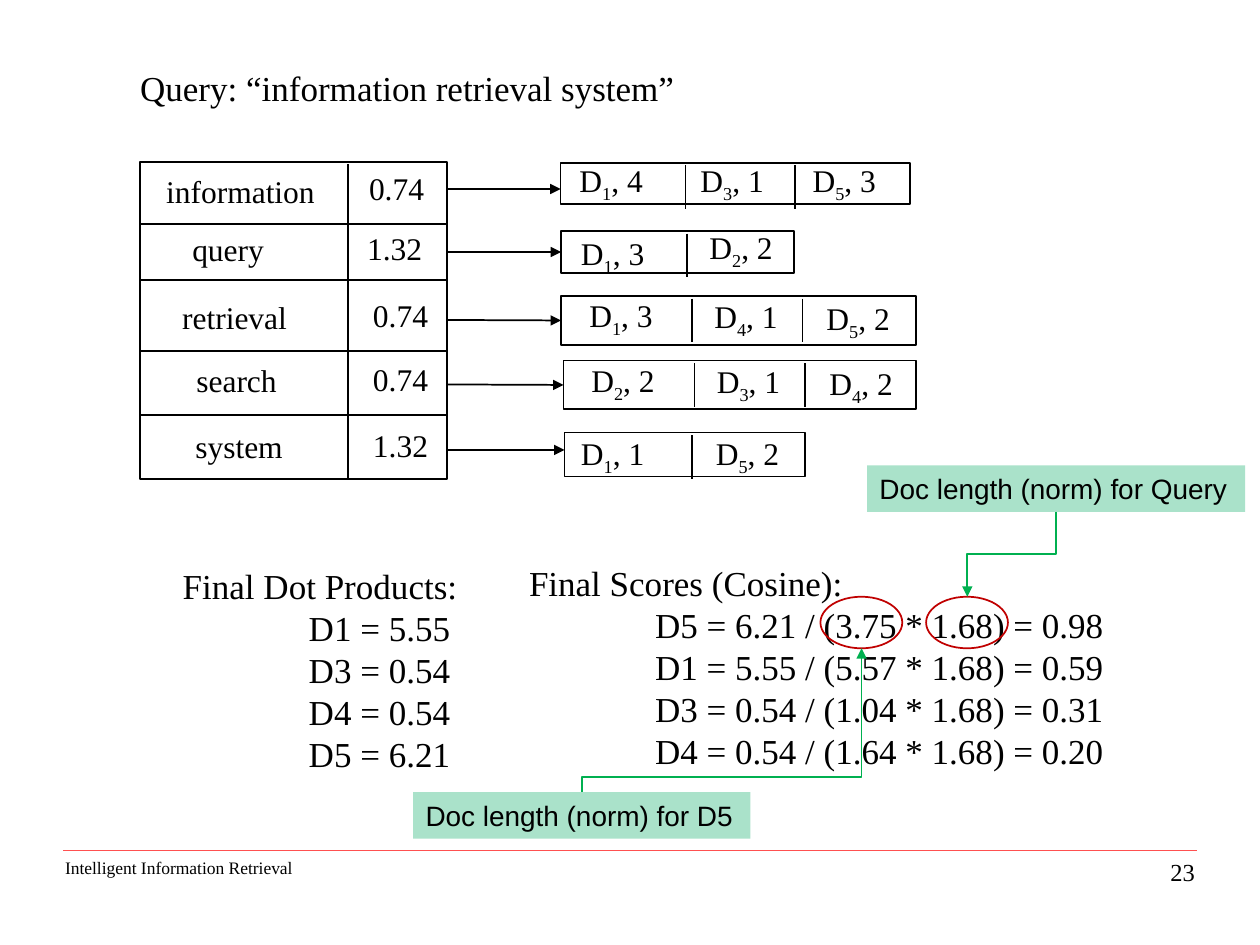
from collections import namedtuple

from lxml.etree import SubElement
from pptx import Presentation
from pptx.dml.color import RGBColor
from pptx.enum.shapes import MSO_CONNECTOR as Connector, MSO_SHAPE as Shape
from pptx.enum.text import MSO_ANCHOR as Anchor, MSO_AUTO_SIZE as AutoSize, PP_ALIGN as Align
from pptx.oxml.ns import qn
from pptx.util import Cm, Pt

COLORS = {
    "ink": "000000",
    "paper": "FFFFFF",
    "rule": "FF5050",
    "mint": "AAE2CA",
    "ring": "C00000",
    "pointer": "00B050",
}
SERIF, SANS = "Times New Roman", "Arial"

# Lengths are in centimetres; postings are (document, count, left, top).
Row = namedtuple("Row", "term center top weight weight_left weight_top arrow_y box dividers postings")
ROWS = [
    Row("information", 4.85, 3.35, "0.74", 7.19, 3.28, 3.81, (11.3, 3.28, 7.04, 0.84), (13.82, 16.03),
        [(1, 4, 11.43, 3.12), (3, 1, 13.87, 3.12), (5, 3, 16.13, 3.12)]),
    Row("query", 4.6, 4.51, "1.32", 7.15, 4.5, 5.08, (11.31, 4.66, 4.7, 0.84), (13.85,),
        [(1, 3, 11.46, 4.6), (2, 2, 14.05, 4.47)]),
    Row("retrieval", 4.73, 5.88, "0.74", 7.27, 5.84, 6.45, (11.31, 5.97, 7.16, 0.98), (13.95, 16.18),
        [(1, 3, 11.63, 5.84), (4, 1, 14.15, 5.87), (5, 2, 16.41, 5.9)]),
    Row("search", 4.77, 7.15, "0.74", 7.27, 7.14, 7.75, (11.36, 7.27, 7.11, 0.98), (14, 16.23),
        [(2, 2, 11.67, 7.15), (3, 1, 14.2, 7.17), (4, 2, 16.47, 7.21)]),
    Row("system", 4.82, 8.48, "1.32", 7.27, 8.46, 9.07, (11.38, 8.72, 4.85, 0.89), (13.95,),
        [(1, 1, 11.46, 8.62), (5, 2, 14.18, 8.63)]),
]
DOT_PRODUCTS = ["Final Dot Products:", "D1 = 5.55", "D3 = 0.54", "D4 = 0.54", "D5 = 6.21"]
SCORES = [
    "Final Scores (Cosine):",
    "D5 = 6.21 / (3.75 * 1.68) = 0.98",
    "D1 = 5.55 / (5.57 * 1.68) = 0.59",
    "D3 = 0.54 / (1.04 * 1.68) = 0.31",
    "D4 = 0.54 / (1.64 * 1.68) = 0.20",
]


def color(name):
    return RGBColor.from_string(COLORS[name])


def place(shape, box):
    shape.left, shape.top, shape.width, shape.height = map(Cm, box)


def add_run(paragraph, text, size, font=SERIF, baseline=None):
    run = paragraph.add_run()
    run.text = text
    run.font.size, run.font.name = Pt(size), font
    run.font.color.rgb = color("ink")
    if baseline:
        run.font._element.set("baseline", str(baseline * 1000))


def add_label(slide, box, runs, size, align=Align.LEFT):
    """Add a one-line text box; runs are (text, baseline percent) pairs."""
    frame = slide.shapes.add_textbox(*map(Cm, box)).text_frame
    frame.word_wrap = False
    paragraph = frame.paragraphs[0]
    paragraph.alignment = align
    for text, baseline in runs:
        add_run(paragraph, text, size, baseline=baseline)


def add_outline(slide, kind, box, fill=None, line=None):
    shape = slide.shapes.add_shape(kind, *map(Cm, box))
    shape.shadow.inherit = False
    if fill:
        shape.fill.solid()
        shape.fill.fore_color.rgb = color(fill)
    else:
        shape.fill.background()
    if line:
        shape.line.color.rgb = color(line)
        shape.line.width = Pt(1)
    else:
        shape.line.fill.background()
    return shape


def add_line(slide, start, end, ink="ink", width=1, arrow=False, kind=Connector.STRAIGHT):
    line = slide.shapes.add_connector(kind, *map(Cm, (*start, *end)))
    line.line.color.rgb = color(ink)
    line.line.width = Pt(width)
    if arrow:
        SubElement(line.line._get_or_add_ln(), qn("a:tailEnd"), type="triangle")
    SubElement(line._element.spPr, qn("a:effectLst"))
    return line


def add_vertical_elbow(slide, start, end, bend):
    """Add an arrow that leaves and arrives vertically, turning at the given share of its height."""
    (x1, y1), (x2, y2) = start, end
    middle_x, middle_y = (x1 + x2) / 2, (y1 + y2) / 2
    half_x, half_y = (x2 - x1) / 2, (y2 - y1) / 2
    elbow = add_line(slide, (middle_x - half_y, middle_y + half_x), (middle_x + half_y, middle_y - half_x),
                     "pointer", arrow=True, kind=Connector.ELBOW)
    properties = elbow._element.spPr
    properties.find(qn("a:xfrm")).set("rot", str(90 * 60000))
    adjustments = properties.find(qn("a:prstGeom")).find(qn("a:avLst"))
    SubElement(adjustments, qn("a:gd"), name="adj1", fmla=f"val {round(bend * 100000)}")


def fill_title(title, box, text):
    place(title, box)
    frame = title.text_frame
    frame.auto_size, frame.vertical_anchor, frame.word_wrap = AutoSize.NONE, Anchor.TOP, False
    frame.paragraphs[0].alignment = Align.LEFT
    add_run(frame.paragraphs[0], text, 20)


def fill_results(body, box, lines):
    """Write a heading and, indented under it, the result lines."""
    place(body, box)
    frame = body.text_frame
    frame.auto_size = AutoSize.NONE
    for index, text in enumerate(lines):
        paragraph = frame.add_paragraph() if index else frame.paragraphs[0]
        paragraph.space_before = Pt(0)
        paragraph.line_spacing = Pt(24)
        properties = paragraph._element.get_or_add_pPr()
        properties.set("marL", str(int(Cm(2.54 if index else 0))))
        properties.set("indent", "0")
        SubElement(properties, qn("a:buNone"))
        add_run(paragraph, text, 20)


def add_dictionary(slide, box):
    left, top, width, height = box
    add_outline(slide, Shape.RECTANGLE, box, "paper", "ink")
    add_line(slide, (left + 4.19, top + 0.05), (left + 4.19, top + height))
    for offset in (1.25, 2.39, 3.81, 5.11):
        add_line(slide, (left, top + offset), (left + width, top + offset))
    for row in ROWS:
        add_label(slide, (row.center - 1.75, row.top, 3.5, 1.02), [(row.term, None)], 18, Align.CENTER)
        add_label(slide, (row.weight_left, row.weight_top, 1.63, 1.02), [(row.weight, None)], 18)


def add_postings(slide, row, arrow_left):
    left, top, _, height = row.box
    posting_box = add_outline(slide, Shape.RECTANGLE, row.box, "paper", "ink")
    for x in row.dividers:
        add_line(slide, (x, top + 0.05), (x, top + 0.93))
    arrow = add_line(slide, (arrow_left, row.arrow_y), (left, row.arrow_y), arrow=True)
    if abs(top + height / 2 - row.arrow_y) < 0.05:
        arrow.end_connect(posting_box, 1)
    for document, count, x, y in row.postings:
        add_label(slide, (x, y, 1.78, 1.02), [("D", None), (str(document), -25), (f", {count}", None)],
                  18, Align.CENTER)


def add_callout(slide, box, text):
    frame = add_outline(slide, Shape.RECTANGLE, box, "mint").text_frame
    frame.word_wrap = False
    frame.paragraphs[0].alignment = Align.LEFT
    add_run(frame.paragraphs[0], text, 16, SANS)


def add_norm_notes(slide):
    for left in (16.54, 18.67):
        add_outline(slide, Shape.OVAL, (left, 12.03, 1.65, 1.04), line="ring")
    add_callout(slide, (8.33, 15.97, 6.8, 0.94), "Doc length (norm) for D5")
    add_vertical_elbow(slide, (11.73, 15.97), (17.37, 13.07), 0.105)
    add_callout(slide, (17.48, 9.38, 7.62, 0.94), "Doc length (norm) for Query")
    add_vertical_elbow(slide, (21.29, 10.32), (19.5, 12.03), 0.5)


def add_footer(slide, top):
    add_line(slide, (1.27, top), (24.13, top), "rule", 0.5)
    add_label(slide, (1.05, top, 5.11, 0.69), [("Intelligent Information Retrieval", None)], 10, Align.CENTER)
    add_label(slide, (19.06, top, 5.28, 0.64), [("23", None)], 14, Align.RIGHT)


def main():
    presentation = Presentation()
    presentation.slide_width, presentation.slide_height = Cm(25.4), Cm(19.05)
    slide = presentation.slides.add_slide(presentation.slide_layouts[3])
    title, products, scores = slide.placeholders
    fill_title(title, (2.57, 1.22, 11.71, 1.12), "Query: “information retrieval system”")
    fill_results(products, (3.43, 11.25, 6.1, 4.52), DOT_PRODUCTS)
    fill_results(scores, (10.41, 11.2, 13.08, 4.52), SCORES)
    add_dictionary(slide, (2.82, 3.26, 6.2, 6.4))
    for row in ROWS:
        add_postings(slide, row, 9.03)
    add_norm_notes(slide)
    add_footer(slide, 17.15)
    presentation.save("out.pptx")


if __name__ == "__main__":
    main()
